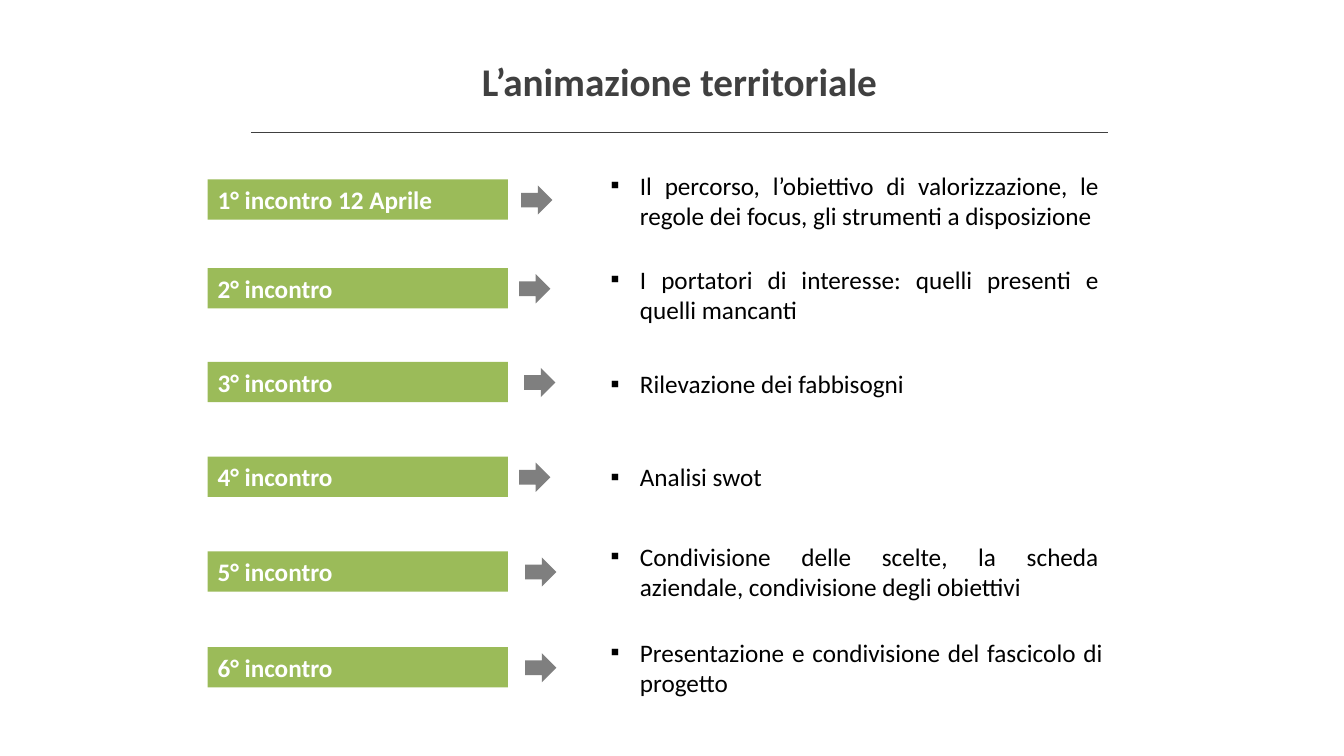
from lxml import etree
from pptx import Presentation
from pptx import util as u
from pptx.dml.color import RGBColor
from pptx.enum import shapes, text
from pptx.oxml import ns

HUES = {"green": "9BBB59", "gray": "7F7F7F", "dark": "404040",
        "black": "000000", "white": "FFFFFF"}

STEPS = [
    (7.12, "1° incontro 12 Aprile", 15.51, 6.56, 15.12, 2.8, 0,
     "Il percorso, l’obiettivo di valorizzazione, le regole dei focus, gli strumenti a disposizione"),
    (10.64, "2° incontro", 15.45, 10.28, 15.12, 2.8, 0,
     "I portatori di interesse: quelli presenti e quelli mancanti"),
    (14.36, "3° incontro", 15.6, 14.44, 15.24, 1.6, 0,
     "Rilevazione dei fabbisogni"),
    (18.12, "4° incontro", 15.45, 18.12, 15.24, 1.6, 6,
     "Analisi swot"),
    (21.88, "5° incontro", 15.63, 21.28, 15.12, 2.8, 0,
     "Condivisione delle scelte, la scheda aziendale, condivisione degli obiettivi"),
    (25.68, "6° incontro", 15.63, 25.08, 15.24, 2.8, 0,
     "Presentazione e condivisione del fascicolo di progetto"),
]


class Deck:
    cols, rows = 40, 30
    font = "Calibri"

    def __init__(self):
        self.file = Presentation()
        self.file.slide_width = u.Inches(13.33)
        self.file.slide_height = u.Inches(7.5)
        self.slide = self.file.slides.add_slide(self.file.slide_layouts[6])

    def grid(self, *spans):
        sides = (self.file.slide_width / self.cols, self.file.slide_height / self.rows)
        return [round(span * sides[i % 2]) for i, span in enumerate(spans)]

    def hue(self, name):
        return RGBColor.from_string(HUES[name])

    def words(self, shape, line, size, hue, bold, align, anchor, gap=0):
        frame = shape.text_frame
        frame.word_wrap = True
        frame.vertical_anchor = anchor
        para = frame.paragraphs[0]
        run = para.add_run()
        run.text = line
        looks = [
            (para, {"alignment": align, "space_before": u.Pt(gap), "space_after": u.Pt(gap)}),
            (run.font, {"name": self.font, "size": u.Pt(size), "bold": bold}),
        ]
        for item, style in looks:
            for key, value in style.items():
                setattr(item, key, value)
        run.font.color.rgb = self.hue(hue)
        return para

    def block(self, kind, hue, *spans):
        shape = self.slide.shapes.add_shape(kind, *self.grid(*spans))
        shape.shadow.inherit = False
        shape.fill.solid()
        shape.fill.fore_color.rgb = self.hue(hue)
        shape.line.fill.background()
        return shape

    def title(self, line, *spans):
        box = self.slide.shapes.add_textbox(*self.grid(*spans))
        self.words(box, line, 28, "dark", True, text.PP_ALIGN.CENTER, text.MSO_ANCHOR.TOP)

    def rule(self, *spans):
        line = self.slide.shapes.add_connector(shapes.MSO_CONNECTOR.STRAIGHT, *self.grid(*spans))
        line.line.color.rgb = self.hue("dark")
        line.line.width = u.Pt(0.75)
        etree.SubElement(line._element.spPr, ns.qn("a:effectLst"))

    def label(self, line, *spans):
        bar = self.block(shapes.MSO_SHAPE.RECTANGLE, "green", *spans)
        self.words(bar, line, 18, "white", True, text.PP_ALIGN.LEFT, text.MSO_ANCHOR.MIDDLE)

    def arrow(self, *spans):
        self.block(shapes.MSO_SHAPE.RIGHT_ARROW, "gray", *spans)

    def point(self, line, gap, *spans):
        box = self.slide.shapes.add_textbox(*self.grid(*spans))
        para = self.words(box, line, 18, "black", False,
                          text.PP_ALIGN.JUSTIFY, text.MSO_ANCHOR.TOP, gap)
        props = para._p.get_or_add_pPr()
        dent = u.Inches(0.29)
        for key, value in {"marL": dent, "indent": -dent}.items():
            props.set(key, str(value))
        tint = etree.SubElement(props, ns.qn("a:buClr"))
        etree.SubElement(tint, ns.qn("a:srgbClr"), val=HUES["black"])
        etree.SubElement(props, ns.qn("a:buFont"), typeface=self.font)
        etree.SubElement(props, ns.qn("a:buChar"), char="▪")


def main():
    deck = Deck()
    deck.title("L’animazione territoriale", 7.47, 2.08, 25.5, 3.12)
    deck.rule(7.47, 5.24, 32.97, 5.24)
    for top, name, tip, head, wide, high, gap, line in STEPS:
        deck.label(name, 6.18, top, 8.94, 1.6)
        deck.arrow(tip, top + 0.24, 0.93, 1.16)
        deck.point(line, gap, 17.88, head, wide, high)
    deck.file.save("out.pptx")


if __name__ == "__main__":
    main()
